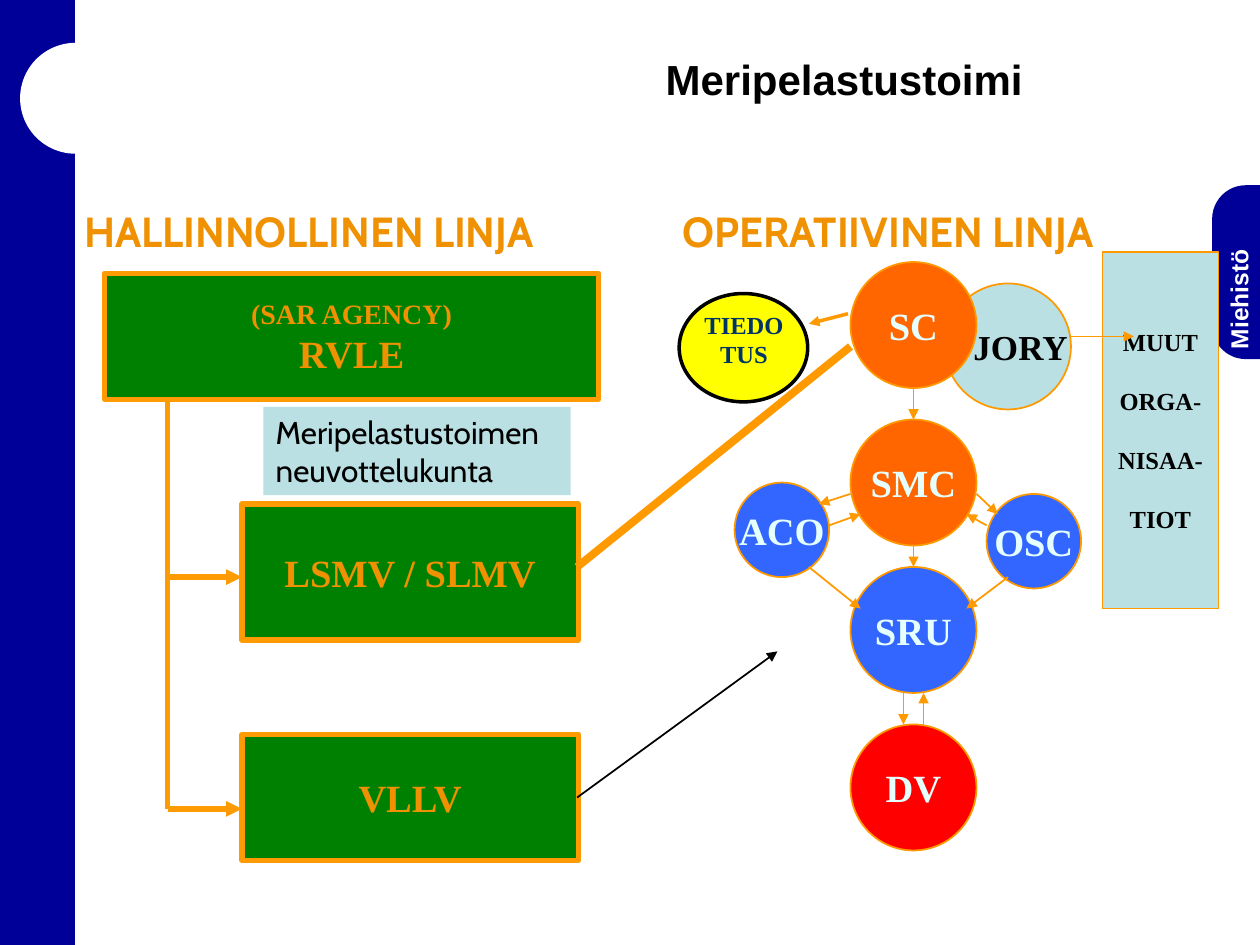
from dataclasses import dataclass

from lxml.etree import SubElement
from pptx import Presentation
from pptx.dml.color import RGBColor as RGB
from pptx.enum.shapes import MSO_CONNECTOR as Link, MSO_SHAPE as Kind
from pptx.enum.text import MSO_ANCHOR as Anchor, PP_ALIGN as Align
from pptx.oxml.ns import qn
from pptx.util import Inches, Pt


@dataclass(frozen=True)
class Theme:
    """Hold the colours, fonts and type sizes of the slide."""
    navy: str = "000099"
    white: str = "FFFFFF"
    black: str = "000000"
    green: str = "008000"
    amber: str = "FE9B03"
    gold: str = "EF9100"
    edge: str = "FF9900"
    orange: str = "FF6600"
    blue: str = "3366FF"
    red: str = "FF0000"
    yellow: str = "FFFF00"
    pale: str = "BBE0E3"
    ice: str = "E5FFFF"
    ink: str = "003366"
    sans: str = "Arial"
    serif: str = "Times New Roman"
    head: str = "Cabin"
    title: int = 24
    large: int = 22
    mid: int = 20
    body: int = 18
    note: int = 16
    small: int = 14


T = Theme()


def write(shape, *lines, size=T.large, color=T.black, font=T.serif, bold=True,
          align=Align.CENTER, anchor=Anchor.MIDDLE, wrap=False, gap=0, inset=(0.1, 0.05)):
    """Fill a shape with one paragraph per line, each a text or a (text, size) pair."""
    frame = shape.text_frame
    frame.word_wrap, frame.vertical_anchor = wrap, anchor
    frame.margin_left = frame.margin_right = Inches(inset[0])
    frame.margin_top = frame.margin_bottom = Inches(inset[1])
    for i, line in enumerate(lines):
        text, points = line if isinstance(line, tuple) else (line, size)
        para = frame.add_paragraph() if i else frame.paragraphs[0]
        para.alignment = align
        if i and gap:
            para.space_before = Pt(gap)
        run = para.add_run()
        run.text = text
        run.font.name, run.font.size, run.font.bold = font, Pt(points), bold
        run.font.color.rgb = RGB.from_string(color)
    return frame


def draw(shapes, kind, box, fill, line=None, width=1, adj=None):
    """Add a flat preset shape."""
    shape = shapes.add_shape(kind, *map(Inches, box))
    shape.shadow.inherit = False
    shape.fill.solid()
    shape.fill.fore_color.rgb = RGB.from_string(fill)
    if line:
        shape.line.color.rgb = RGB.from_string(line)
        shape.line.width = Pt(width)
    else:
        shape.line.fill.background()
    if adj is not None:
        shape.adjustments[0] = adj
    return shape


def label(shapes, box, *lines, **style):
    """Add a text box."""
    shape = shapes.add_textbox(*map(Inches, box))
    write(shape, *lines, **style)
    return shape


def join(shapes, start, end, color=T.edge, width=1, arrow=True):
    """Add a straight line, with an arrowhead at its end if asked."""
    line = shapes.add_connector(Link.STRAIGHT, *map(Inches, (*start, *end)))
    line.line.color.rgb = RGB.from_string(color)
    line.line.width = Pt(width)
    if arrow:
        SubElement(line.line._get_or_add_ln(), qn("a:tailEnd"), type="triangle")
    SubElement(line._element.spPr, qn("a:effectLst"))


def frame_page(shapes, wide, high):
    """Draw the side band, its notch, the tab and the title."""
    draw(shapes, Kind.RECTANGLE, (0, 0, 0.59, high), T.navy, T.navy, 0.75)
    draw(shapes, Kind.ROUNDED_RECTANGLE, (0.16, 0.34, 2.5, 0.88), T.white, adj=0.5)
    draw(shapes, Kind.ROUNDED_RECTANGLE, (wide - 0.38, 1.47, 0.75, 1.38), T.navy, adj=0.356)
    tab = label(shapes, (wide - 0.78, 2.02, 1.22, 0.28), "Miehistö", size=T.small,
                color=T.white, font=T.sans, align=Align.LEFT, inset=(0, 0))
    tab.rotation = 270
    label(shapes, (3.9, 0, 5.6, 1.25), "Meripelastustoimi", size=T.title,
          font=T.sans, wrap=True)


def heading(shapes, box, text):
    """Write the heading of one line of command."""
    label(shapes, box, text, size=T.title, color=T.gold, font=T.head,
          align=Align.LEFT, anchor=Anchor.TOP, wrap=True)


def office(shapes, left, top):
    """Draw the tree of offices from its top left corner."""
    cells = [
        (0, 0, 3.92, 1, [("(SAR AGENCY)", T.note), "RVLE"]),
        (1.09, 1.83, 2.67, 1.08, ["LSMV / SLMV"]),
        (1.09, 3.66, 2.67, 1, ["VLLV"]),
    ]
    for x, y, wide, high, lines in cells:
        cell = draw(shapes, Kind.RECTANGLE, (left + x, top + y, wide, high),
                    T.green, T.amber, 3)
        write(cell, *lines, color=T.gold)
    stem = left + 0.5
    join(shapes, (stem, top + 1), (stem, top + 4.25), T.amber, 3, arrow=False)
    for y in (2.41, 4.25):
        join(shapes, (stem, top + y), (left + 1.09, top + y), T.amber, 3)


def rescue(shapes, left, top):
    """Draw the chain of rescue units from its top left corner."""
    def at(x, y):
        """Shift a point into the region."""
        return left + x, top + y

    def disc(x, y, size, text, fill, color=T.ice, points=T.large):
        """Draw one round unit."""
        shape = draw(shapes, Kind.OVAL, (*at(x, y), size, size), fill, T.edge)
        return write(shape, text, size=points, color=color)

    for x, y, size, text, fill in [
        (0.92, 1.25, 1, "SMC", T.orange), (0.92, 2.42, 1, "SRU", T.blue),
        (0.92, 3.67, 1, "DV", T.red), (0, 1.75, 0.75, "ACO", T.blue),
        (2, 1.84, 0.75, "OSC", T.blue),
    ]:
        disc(x, y, size, text, fill)
    for start, end in [
        ((1.42, 0.92), (1.42, 1.25)), ((1.42, 2.25), (1.42, 2.42)),
        ((1.34, 3.42), (1.34, 3.67)), ((1.5, 3.67), (1.5, 3.42)),
        ((0.92, 1.84), (0.67, 1.92)), ((0.75, 2.09), (1, 2)),
        ((0.59, 2.42), (1, 2.75)), ((1.92, 1.84), (2.09, 2)),
        ((2, 2.09), (1.84, 2)), ((2.17, 2.5), (1.84, 2.75)),
    ]:
        join(shapes, at(*start), at(*end))
    staff = disc(1.67, 0.17, 1, "JORY", T.pale, T.black, T.mid)
    staff.margin_left = Inches(0.3)
    disc(0.92, 0, 1, "SC", T.orange)
    other = draw(shapes, Kind.RECTANGLE, (*at(2.92, -0.08), 0.92, 2.83), T.pale, T.edge)
    write(other, "MUUT", "ORGA-", "NISAA-", "TIOT", size=T.small, gap=17)
    join(shapes, at(2.67, 0.59), at(3.17, 0.59))
    join(shapes, at(-1.25, 2.42), at(0.92, 0.67), width=4.5, arrow=False)


def media(shapes, left, top):
    """Draw the information unit and the arrow that leads to it."""
    draw(shapes, Kind.OVAL, (left, top, 1.02, 0.86), T.yellow, T.black, 2)
    label(shapes, (left + 0.08, top + 0.08, 0.87, 0.57), "TIEDOTUS", size=T.small,
          color=T.ink, anchor=Anchor.TOP, wrap=True)
    join(shapes, (left + 1.34, top + 0.16), (left + 1.03, top + 0.24), width=2)


def board(shapes, box):
    """Draw the advisory board."""
    write(draw(shapes, Kind.RECTANGLE, box, T.pale), "Meripelastustoimen neuvottelukunta",
          size=T.body, font=T.head, bold=False, align=Align.LEFT, wrap=True)


def main():
    """Build the slide and save it."""
    deck = Presentation()
    deck.slide_width, deck.slide_height = Inches(10), Inches(7.5)
    shapes = deck.slides.add_slide(deck.slide_layouts[6]).shapes
    frame_page(shapes, 10, 7.5)
    office(shapes.add_group_shape().shapes, 0.83, 2.17)
    heading(shapes, (0.57, 1.58, 4.58, 0.5), "HALLINNOLLINEN LINJA")
    heading(shapes, (5.32, 1.58, 4.17, 0.5), "OPERATIIVINEN LINJA")
    join(shapes, (4.58, 6.33), (6.17, 5.17), T.black)
    rescue(shapes.add_group_shape().shapes, 5.83, 2.08)
    media(shapes, 5.39, 2.33)
    board(shapes, (2.09, 3.23, 2.44, 0.7))
    deck.save("out.pptx")


if __name__ == "__main__":
    main()
